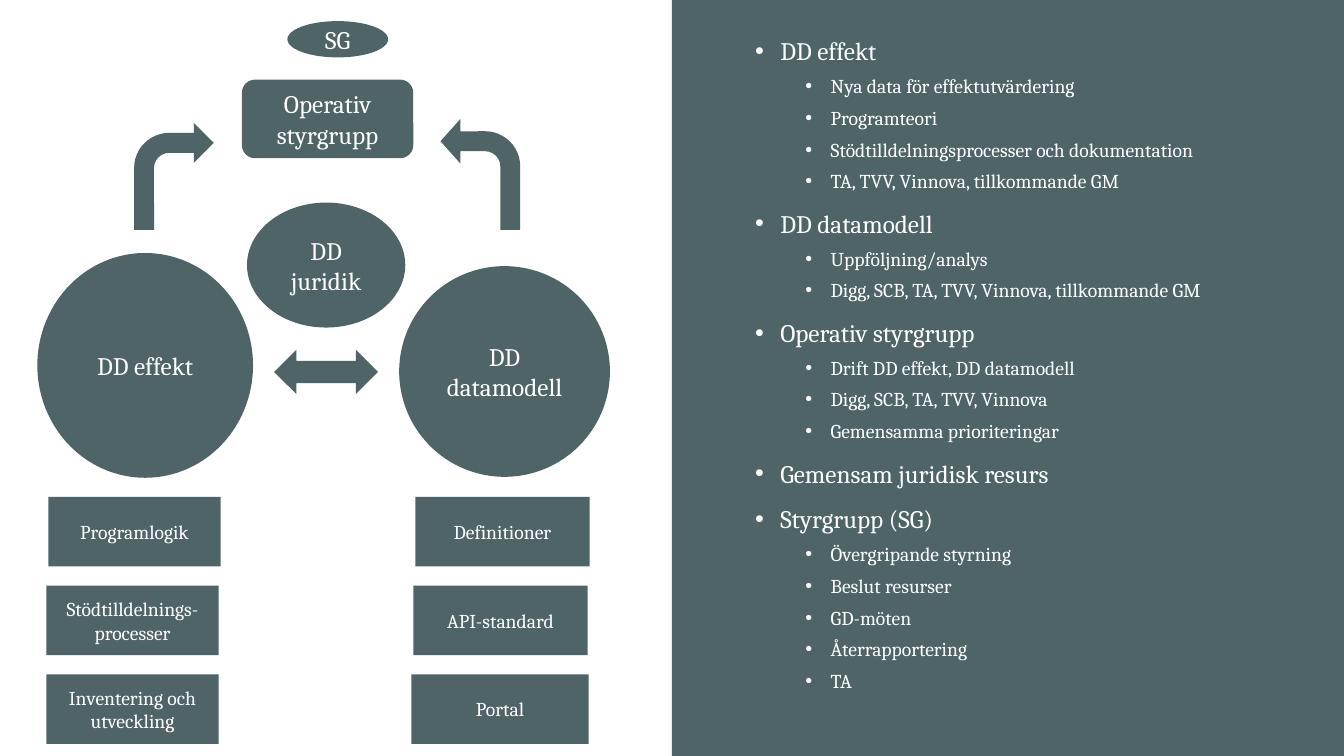
from lxml.etree import SubElement
from pptx import Presentation
from pptx.dml.color import RGBColor
from pptx.enum.shapes import MSO_SHAPE
from pptx.enum.text import MSO_ANCHOR, PP_ALIGN
from pptx.oxml.ns import qn
from pptx.util import Inches, Pt

COLORS = {"slate": "4F6467", "white": "FFFFFF"}
LARGE, SMALL = Pt(18), Pt(14)

# Bullet format by level
LEVELS = [
    {"size": LARGE, "margin": Inches(0.25), "space": Pt(10)},
    {"size": SMALL, "margin": Inches(0.75), "space": Pt(5)},
]

TOPICS = [
    ("DD effekt", ["Nya data för effektutvärdering", "Programteori",
                   "Stödtilldelningsprocesser och dokumentation",
                   "TA, TVV, Vinnova, tillkommande GM"]),
    ("DD datamodell", ["Uppföljning/analys",
                       "Digg, SCB, TA, TVV, Vinnova, tillkommande GM"]),
    ("Operativ styrgrupp", ["Drift DD effekt, DD datamodell",
                            "Digg, SCB, TA, TVV, Vinnova",
                            "Gemensamma prioriteringar"]),
    ("Gemensam juridisk resurs", []),
    ("Styrgrupp (SG)", ["Övergripande styrning", "Beslut resurser", "GD-möten",
                        "Återrapportering", "TA"]),
]

# Places are left, top, width and height in percent of the slide
GROUPS = [
    (MSO_SHAPE.OVAL, (2.78, 33.47, 16.05, 29.73), ["DD effekt"]),
    (MSO_SHAPE.OVAL, (18.38, 26.8, 11.78, 16.53), ["DD juridik"]),
    (MSO_SHAPE.OVAL, (29.7, 35.2, 15.68, 27.87), ["DD", "datamodell"]),
    (MSO_SHAPE.ROUNDED_RECTANGLE, (18, 10.53, 12.75, 10.4), ["Operativ styrgrupp"]),
    (MSO_SHAPE.OVAL, (21.38, 2.8, 7.5, 4.8), ["SG"]),
]

# Each box: left, width, lines
TASK_ROWS = [
    [(3.6, 12.83, ["Programlogik"]), (30.9, 12.98, ["Definitioner"])],
    [(3.45, 12.83, ["Stödtilldelnings-", "processer"]), (30.75, 12.98, ["API-standard"])],
    [(3.45, 12.83, ["Inventering och utveckling"]), (30.6, 13.2, ["Portal"])],
]
TASK_TOP, TASK_PITCH, TASK_HEIGHT = 65.73, 11.73, 9.2


class SlideBuilder:
    def __init__(self, presentation):
        self.width = presentation.slide_width
        self.height = presentation.slide_height
        self.slide = presentation.slides.add_slide(presentation.slide_layouts[6])
        self.font = {"name": "Cambria"}

    def place(self, left, top, width, height):
        return [round(share * length / 100) for share, length in
                ((left, self.width), (top, self.height),
                 (width, self.width), (height, self.height))]

    def set_text(self, paragraph, text, size):
        paragraph.text = text
        for name, value in {**self.font, "size": size}.items():
            setattr(paragraph.font, name, value)
        paragraph.font.color.rgb = RGBColor.from_string(COLORS["white"])

    def shape(self, kind, place, lines=(), size=LARGE):
        shape = self.slide.shapes.add_shape(kind, *self.place(*place))
        shape.shadow.inherit = False
        shape.fill.solid()
        shape.fill.fore_color.rgb = RGBColor.from_string(COLORS["slate"])
        shape.line.fill.background()
        frame = shape.text_frame
        frame.vertical_anchor = MSO_ANCHOR.MIDDLE
        for index, line in enumerate(lines):
            paragraph = frame.add_paragraph() if index else frame.paragraphs[0]
            paragraph.alignment = PP_ALIGN.CENTER
            self.set_text(paragraph, line, size)
        return shape

    def bent_arrow(self, place, adjustments, mirrored=False):
        arrow = self.shape(MSO_SHAPE.BENT_ARROW, place)
        for index, value in enumerate(adjustments):
            arrow.adjustments[index] = value
        if mirrored:
            arrow._element.spPr.find(qn("a:xfrm")).set("flipH", "1")

    def bullets(self, place, topics):
        frame = self.slide.shapes.add_textbox(*self.place(*place)).text_frame
        margins = ("margin_left", "margin_top", "margin_right", "margin_bottom")
        for name, value in {"word_wrap": True, **dict.fromkeys(margins, 0)}.items():
            setattr(frame, name, value)
        items = [item for title, details in topics
                 for item in [(0, title), *((1, detail) for detail in details)]]
        for index, (level, text) in enumerate(items):
            paragraph = frame.add_paragraph() if index else frame.paragraphs[0]
            style = LEVELS[level]
            properties = paragraph._p.get_or_add_pPr()
            properties.set("marL", str(style["margin"]))
            properties.set("indent", str(-Inches(0.25)))
            SubElement(properties, qn("a:buFont")).set("typeface", "Arial")
            SubElement(properties, qn("a:buChar")).set("char", "•")
            values = {"level": level, "line_spacing": 1.05,
                      "space_before": style["space"] if index else Pt(0)}
            for name, value in values.items():
                setattr(paragraph, name, value)
            self.set_text(paragraph, text, style["size"])


def main():
    presentation = Presentation()
    presentation.slide_width = Inches(13.33)
    presentation.slide_height = Inches(7.5)
    builder = SlideBuilder(presentation)

    # Right panel with the topics
    builder.shape(MSO_SHAPE.RECTANGLE, (50, 0, 50, 100))
    builder.bullets((56.18, 4.53, 37.43, 80), TOPICS)

    # Groups in the organisation
    for kind, place, lines in GROUPS:
        builder.shape(kind, place, lines)

    # Task boxes below the two large groups
    for row, boxes in enumerate(TASK_ROWS):
        for left, width, lines in boxes:
            place = (left, TASK_TOP + row * TASK_PITCH, width, TASK_HEIGHT)
            builder.shape(MSO_SHAPE.RECTANGLE, place, lines, SMALL)

    # Arrows between the groups
    builder.bent_arrow((9.98, 16.27, 5.93, 14.13), (0.25, 0.25, 0.25, 0.44))
    builder.bent_arrow((32.78, 15.73, 5.93, 14.67), (0.25, 0.28, 0.25, 0.44), mirrored=True)
    builder.shape(MSO_SHAPE.LEFT_RIGHT_ARROW, (20.4, 46.27, 7.73, 5.87))

    presentation.save("out.pptx")


if __name__ == "__main__":
    main()
